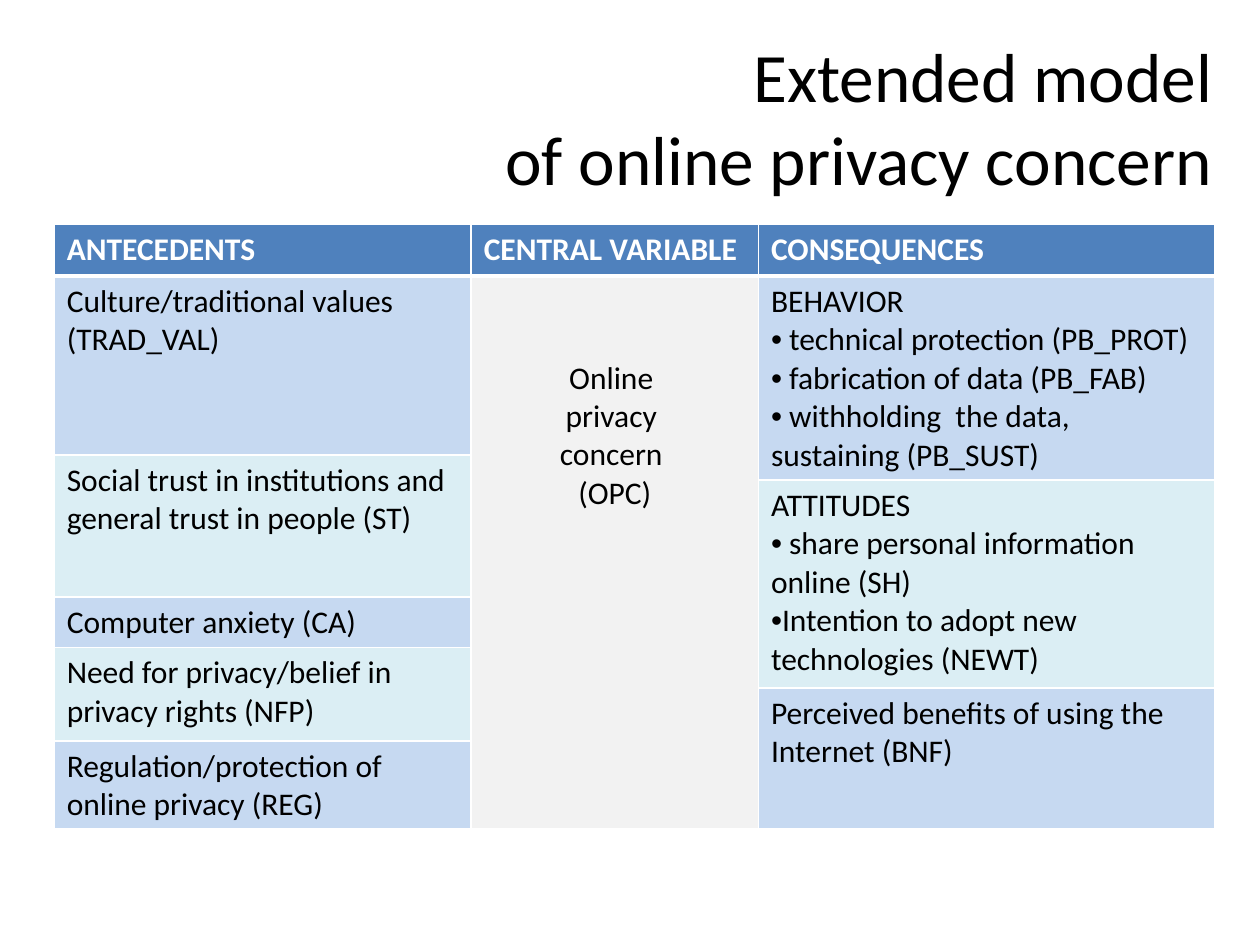
from dataclasses import dataclass
from lxml.etree import SubElement
from pptx import Presentation
from pptx.dml.color import RGBColor
from pptx.enum.text import MSO_ANCHOR as Anchor, PP_ALIGN as Align
from pptx.oxml import parse_xml
from pptx.oxml.ns import nsdecls, qn
from pptx.slide import Slide
from pptx.util import Inches, Pt

BLACK = RGBColor(0, 0, 0)
WHITE = RGBColor(255, 255, 255)
BLUE = RGBColor(0x4F, 0x81, 0xBD)
PALE = RGBColor(0xC6, 0xD9, 0xF1)
AQUA = RGBColor(0xDB, 0xEE, 0xF4)
GREY = RGBColor(0xF2, 0xF2, 0xF2)

COLS = [33.1, 22.8, 36.2]
ROWS = [4.1, 14.2, 2, 9.3, 4, 3.2, 4.2, 7]
HEADS = ["ANTECEDENTS", "CENTRAL VARIABLE", "CONSEQUENCES"]
BODY = [
    (1, 0, 1, PALE, ["Culture/traditional values (TRAD_VAL)"]),
    (2, 0, 2, AQUA, ["Social trust in institutions and general trust in people (ST)"]),
    (4, 0, 1, PALE, ["Computer anxiety (CA)"]),
    (5, 0, 2, AQUA, ["Need for privacy/belief in privacy rights (NFP)"]),
    (7, 0, 1, PALE, ["Regulation/protection of online privacy (REG)"]),
    (1, 2, 2, PALE, ["BEHAVIOR", "• technical protection (PB_PROT)",
                     "• fabrication of data (PB_FAB)",
                     "• withholding  the data, sustaining (PB_SUST)"]),
    (3, 2, 3, AQUA, ["ATTITUDES", "• share personal information online (SH)",
                     "•Intention to adopt new technologies (NEWT)"]),
    (6, 2, 2, PALE, ["Perceived benefits of using the Internet (BNF)"]),
]
CENTRAL = ["Online ", "privacy ", "concern ", "(OPC)"]


@dataclass
class Deck:
    """Draws styled elements on a slide with a grid of 100 columns and 75 rows."""
    slide: Slide
    face: str = "Calibri"
    unit: float = 0.1

    def span(self, *cells):
        return [Inches(cell * self.unit) for cell in cells]

    def fill_text(self, frame, lines, size=18, ink=BLACK, bold=False, align=Align.LEFT):
        for i, line in enumerate(lines):
            para = frame.add_paragraph() if i else frame.paragraphs[0]
            para.text = line.removeprefix("•")
            para.alignment = align
            if line.startswith("•"):
                props = para._p.get_or_add_pPr()
                props.set("marL", "0")
                props.set("indent", "0")
                SubElement(props, qn("a:buFont"), typeface="Arial")
                SubElement(props, qn("a:buChar"), char="•")
            font = para.font
            font.name, font.size, font.bold = self.face, Pt(size), bold
            font.color.rgb = ink

    def title(self, text, *area):
        frame = self.slide.shapes.add_textbox(*self.span(*area)).text_frame
        frame.word_wrap = True
        frame.vertical_anchor = Anchor.MIDDLE
        self.fill_text(frame, [text], 39.6, align=Align.RIGHT)

    def table(self, left, top, cols, rows):
        area = self.span(left, top, sum(cols), sum(rows))
        grid = self.slide.shapes.add_table(len(rows), len(cols), *area).table
        grid.horz_banding = False
        for col, width in zip(grid.columns, self.span(*cols)):
            col.width = width
        for row, height in zip(grid.rows, self.span(*rows)):
            row.height = height
        return grid

    def cell(self, grid, row, col, deep, fill, lines, **style):
        cell = grid.cell(row, col)
        if deep > 1:
            cell.merge(grid.cell(row + deep - 1, col))
        self.fill_text(cell.text_frame, lines, **style)
        for step in range(row, row + deep):
            self.paint(grid.cell(step, col), step, fill)
        return cell

    def paint(self, cell, row, fill):
        cell.fill.solid()
        cell.fill.fore_color.rgb = fill
        props = cell._tc.get_or_add_tcPr()
        thick = {"B": 3} if row == 0 else {"T": 3} if row == 1 else {}
        for i, side in enumerate("LRTB"):
            width = Pt(thick.get(side, 1))
            props.insert(i, parse_xml(
                f'<a:ln{side} {nsdecls("a")} w="{int(width)}"><a:solidFill>'
                f'<a:srgbClr val="{WHITE}"/></a:solidFill></a:ln{side}>'))


def main():
    show = Presentation()
    show.slide_width, show.slide_height = Inches(10), Inches(7.5)
    deck = Deck(show.slides.add_slide(show.slide_layouts[6]))
    deck.title("Extended model\vof online privacy concern", 0, 3, 97.2, 12.5)
    grid = deck.table(4.3, 17.8, COLS, ROWS)
    for col, head in enumerate(HEADS):
        deck.cell(grid, 0, col, 1, BLUE, [head], ink=WHITE, bold=True)
    for entry in BODY:
        deck.cell(grid, *entry)
    core = deck.cell(grid, 1, 1, 7, GREY, CENTRAL, align=Align.CENTER)
    core.margin_top = Inches(0.66)
    show.save("out.pptx")


if __name__ == "__main__":
    main()
